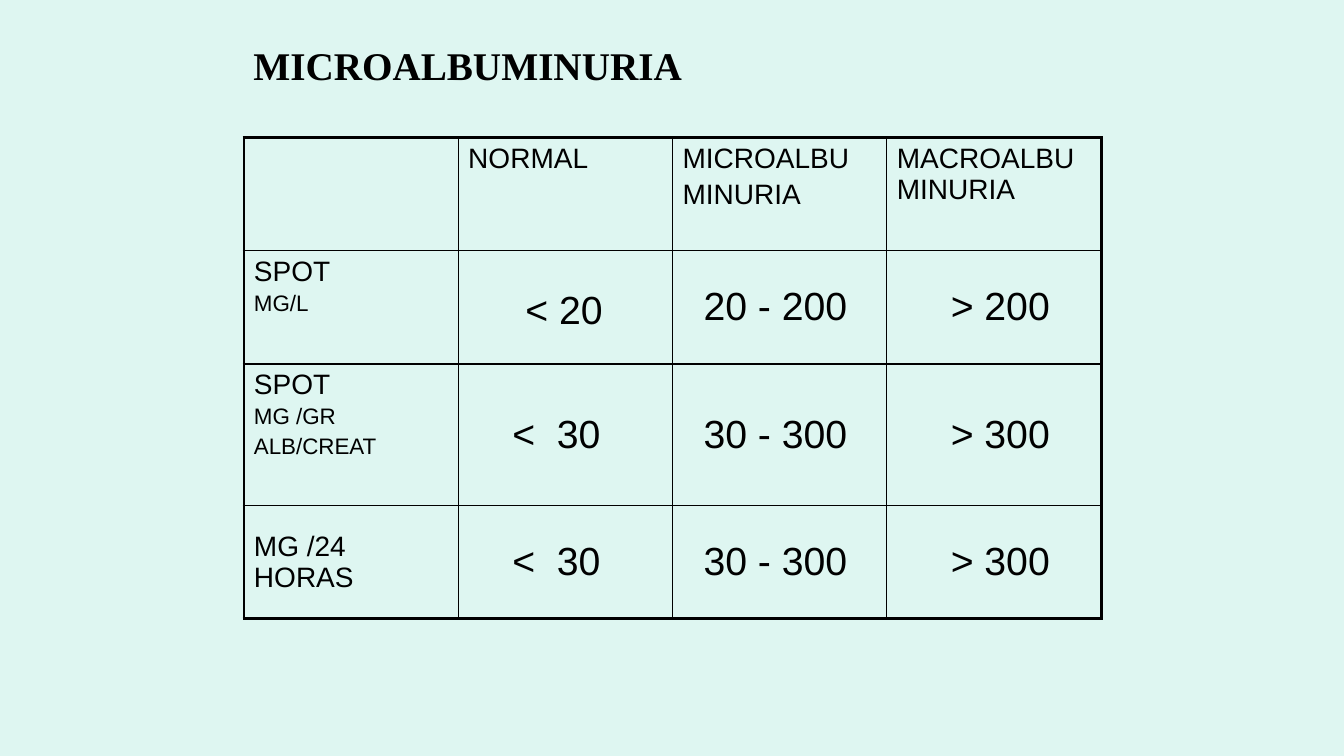
"""Build a slide with a table of microalbuminuria ranges."""
import pptx
import pptx.dml.color
import pptx.enum.text
import pptx.oxml
import pptx.oxml.ns
import pptx.util

Cm, Pt = pptx.util.Cm, pptx.util.Pt
MID = pptx.enum.text.MSO_ANCHOR.MIDDLE
TOP = pptx.enum.text.MSO_ANCHOR.TOP
LEFT = pptx.enum.text.PP_ALIGN.LEFT
COLORS = {"back": "DEF6F1", "ink": "000000"}


def style(run, **values):
    for name, value in values.items():
        setattr(run.font, name, value)
    run.font.color.rgb = pptx.dml.color.RGBColor.from_string(COLORS["ink"])


def border(cell, side, width):
    cell._tc.get_or_add_tcPr().append(pptx.oxml.parse_xml(
        f'<a:ln{side} {pptx.oxml.ns.nsdecls("a")} w="{Pt(width)}">'
        f'<a:solidFill><a:srgbClr val="{COLORS["ink"]}"/></a:solidFill></a:ln{side}>'))


deck = pptx.Presentation()
deck.slide_width, deck.slide_height = Cm(33.87), Cm(19.05)
slide = deck.slides.add_slide(deck.slide_layouts[5])
back = slide.background.fill
back.solid()
back.fore_color.rgb = pptx.dml.color.RGBColor.from_string(COLORS["back"])

title = slide.shapes.title
place = {"left": Cm(6.13), "top": Cm(0.92), "width": Cm(21.2), "height": Cm(1.45)}
for name, value in place.items():
    setattr(title, name, value)
title.text_frame.vertical_anchor = TOP
title.text_frame.text = "MICROALBUMINURIA"
line = title.text_frame.paragraphs[0]
line.alignment = LEFT
style(line.runs[0], name="Times New Roman", size=Pt(28), bold=True)

rows = [
    ["", "NORMAL", "MICROALBU\nMINURIA", "MACROALBUMINURIA"],
    ["SPOT\nMG/L", "< 20", "20 - 200", "> 200"],
    ["SPOT\nMG /GR\nALB/CREAT", "<  30", "30 - 300", "> 300"],
    ["MG /24 HORAS", "<  30", "30 - 300", "> 300"],
]
heights = [2.85, 2.85, 3.57, 2.85]
indents = [0.25, 1.36, 0.78, 1.61]
last = len(rows) - 1

table = slide.shapes.add_table(
    len(rows), len(indents), Cm(6.15), Cm(3.47), Cm(21.6), Cm(sum(heights))).table
table.first_row = table.horz_banding = False
for col in table.columns:
    col.width = Cm(5.4)

for r, row in enumerate(rows):
    table.rows[r].height = Cm(heights[r])
    for c, text in enumerate(row):
        cell = table.cell(r, c)
        value = r > 0 and c > 0
        cell.text = text
        cell.vertical_anchor = MID if value or r == last else TOP
        cell.margin_left = Cm(indents[c] if value else 0.25)
        for n, line in enumerate(cell.text_frame.paragraphs):
            size = 28 if value else 16 if c == 0 and n else 20
            line.font.size = Pt(size)
            if n:
                line.space_before = Pt(size * 0.2)
            for run in line.runs:
                style(run, name="Arial", size=Pt(size))
        edges = {"L": c == 0, "R": c == last, "T": r == 0, "B": r == last}
        for side, outer in edges.items():
            border(cell, side, 2.25 if outer else 1)
        cell.fill.background()

first = table.cell(1, 1)
first.margin_left, first.margin_top = Cm(1.69), Cm(0.33)

deck.save("out.pptx")
